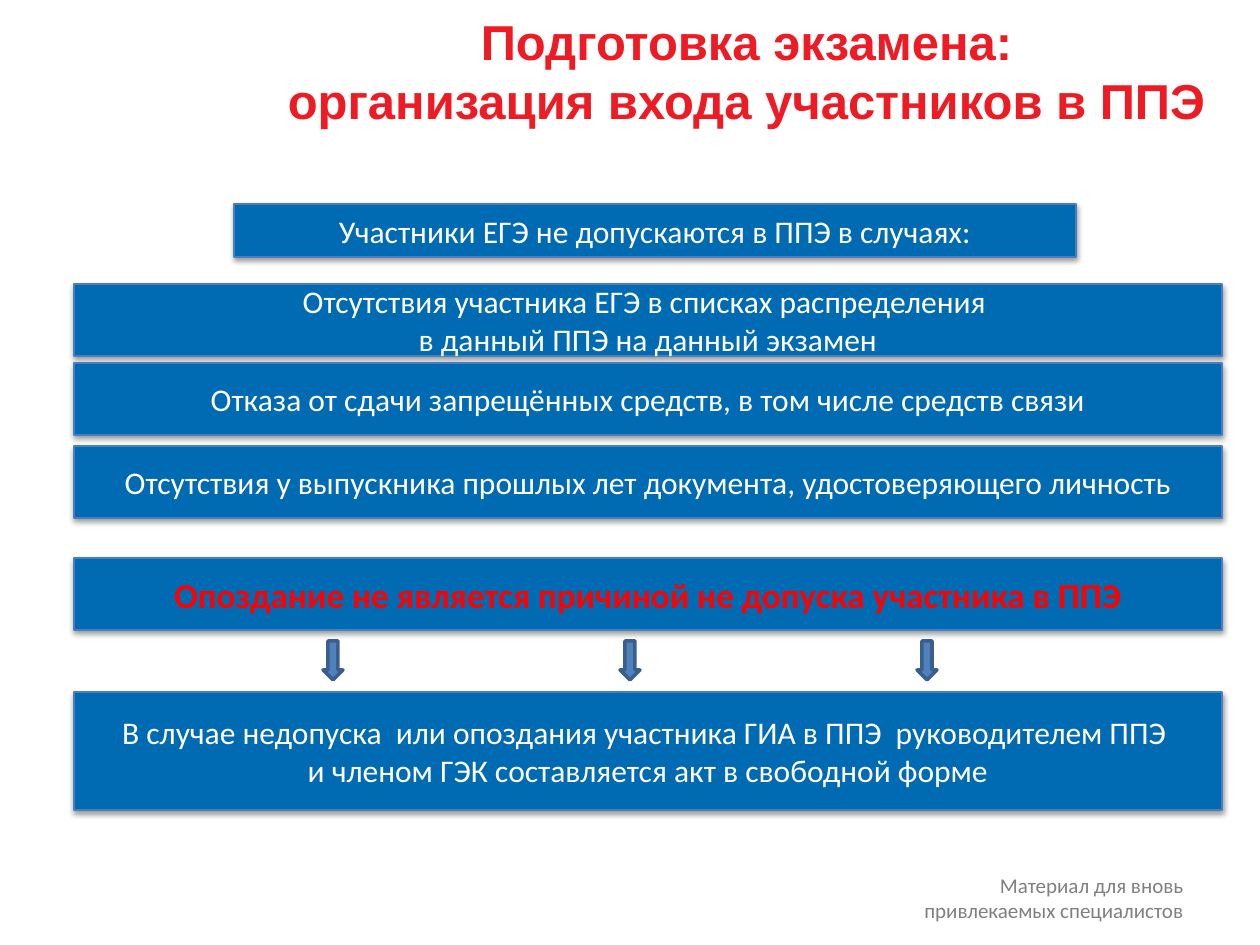
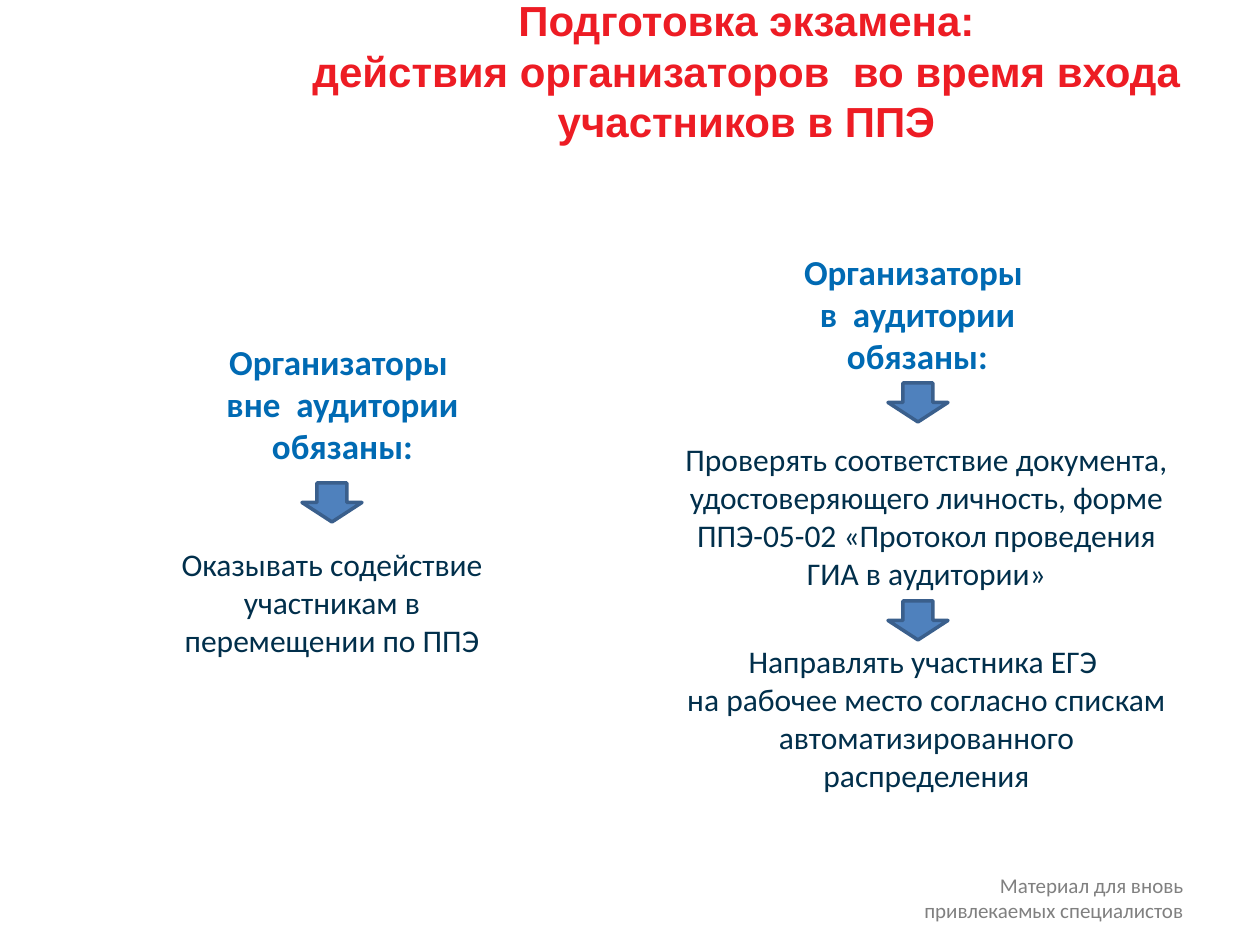
from lxml import etree
from pptx import Presentation
from pptx.dml.color import RGBColor
from pptx.enum.shapes import MSO_SHAPE as SHAPE
from pptx.enum.text import MSO_ANCHOR as ANCHOR, MSO_AUTO_SIZE as AUTO, PP_ALIGN as ALIGN
from pptx.oxml import parse_xml
from pptx.util import Pt

PX = 914400 / 126
BLUE, WHITE, RED, NAVY = "006AB3", "FFFFFF", "FF0000", "012F4B"
TITLE_RED, GREY, BAR_LINE = "ED1C24", "808080", "4B7EBC"
ARROW_FILL, ARROW_LINE = "4F81BD", "3A5F8C"
SHADOW = (
    '<a:outerShdw xmlns:a="http://schemas.openxmlformats.org/drawingml/2006/main" '
    'blurRad="40000" dist="20000" dir="5400000" rotWithShape="0">'
    '<a:srgbClr val="000000"><a:alpha val="38000"/></a:srgbClr></a:outerShdw>'
)


def rgb(value):
    return RGBColor.from_string(value)


def put(sp, box, texts=(), size=18, color=WHITE, bold=False, font="Calibri",
        align=ALIGN.CENTER, anchor=ANCHOR.TOP, gap=0):
    """Place a shape and write its paragraphs in one style."""
    sp.left, sp.top, sp.width, sp.height = (round(v * PX) for v in box)
    tf = sp.text_frame
    tf.word_wrap, tf.auto_size, tf.vertical_anchor = True, AUTO.NONE, anchor
    for i, text in enumerate(texts):
        p = tf.add_paragraph() if i else tf.paragraphs[0]
        p.text, p.alignment = text, align
        p.space_before = Pt(gap if i else 0)
        p.font.name, p.font.size, p.font.bold = font, Pt(size), bold
        p.font.color.rgb = rgb(color)


prs = Presentation()
prs.slide_width, prs.slide_height = round(1260 * PX), round(945 * PX)

# Titles and footers
titles = [
    ("Подготовка экзамена:\nорганизация входа участников в ППЭ", 28),
    ("Подготовка экзамена:\nдействия организаторов  во время входа участников в ППЭ", 24),
]
for title, size in titles:
    s = prs.slides.add_slide(prs.slide_layouts[5])
    put(s.shapes.title, (238, -3, 1017, 147), [title], size, TITLE_RED, True,
        "Arial", anchor=ANCHOR.MIDDLE)
    put(s.shapes.add_textbox(0, 0, 0, 0), (878, 866, 318, 63),
        ["Материал для вновь привлекаемых специалистов"], 12, GREY, align=ALIGN.RIGHT)
entry, duties = prs.slides

# Entry rules: shadowed bars
bars = [
    ((234, 204, 842, 53), "Участники ЕГЭ не допускаются в ППЭ в случаях:"),
    ((74, 284, 1148, 72), "Отсутствия участника ЕГЭ в списках распределения \n"
                          "в данный ППЭ на данный экзамен"),
    ((74, 363, 1148, 72), "Отказа от сдачи запрещённых средств, в том числе средств связи"),
    ((74, 446, 1148, 72), "Отсутствия у выпускника прошлых лет документа, "
                          "удостоверяющего личность"),
    ((74, 558, 1148, 72), "Опоздание не является причиной не допуска участника в ППЭ"),
    ((74, 692, 1148, 118), "В случае недопуска  или опоздания участника ГИА в ППЭ  "
                           "руководителем ППЭ \nи членом ГЭК составляется акт в свободной форме"),
]
for box, text in bars:
    sp = entry.shapes.add_shape(SHAPE.RECTANGLE, 0, 0, 0, 0)
    sp.fill.solid()
    sp.fill.fore_color.rgb = rgb(BLUE)
    sp.line.color.rgb = rgb(BAR_LINE)
    sp.line.width = Pt(0.75)
    sp.shadow.inherit = False
    sp.element.spPr.find("{*}effectLst").append(parse_xml(SHADOW))
    late = text.startswith("Опоздание")
    put(sp, box, [text], 20 if late else 18, RED if late else WHITE, late,
        anchor=ANCHOR.MIDDLE)

# Duties: headings and instructions
for box, heading in [
    ((144, 334, 397, 140), "Организаторы \nвне  аудитории обязаны:"),
    ((779, 244, 277, 140), "Организаторы \nв  аудитории обязаны:"),
]:
    put(duties.shapes.add_textbox(0, 0, 0, 0), box, [heading], 20, BLUE, True)

for box, steps in [
    ((169, 539, 326, 236), ["Оказывать содействие участникам в перемещении по ППЭ"]),
    ((669, 434, 515, 386), [
        "Проверять соответствие документа, удостоверяющего личность, форме "
        "ППЭ-05-02 «Протокол проведения ГИА в аудитории»",
        "Направлять участника ЕГЭ \nна рабочее место согласно спискам "
        "автоматизированного распределения",
    ]),
]:
    put(duties.shapes.add_textbox(0, 0, 0, 0), box, steps, 18, NAVY, gap=29)

# Down arrows on both slides
arrows = [(entry, 323 + 297 * i, 641, 20) for i in range(3)]
arrows += [(duties, 302, 483, 60), (duties, 888, 383, 60), (duties, 888, 601, 60)]
for s, x, y, width in arrows:
    sp = s.shapes.add_shape(SHAPE.DOWN_ARROW, 0, 0, 0, 0)
    put(sp, (x, y, width, 39))
    sp.fill.solid()
    sp.fill.fore_color.rgb = rgb(ARROW_FILL)
    sp.line.color.rgb = rgb(ARROW_LINE)
    sp.line.width = Pt(2)
    sp.shadow.inherit = False

prs.save("out.pptx")
